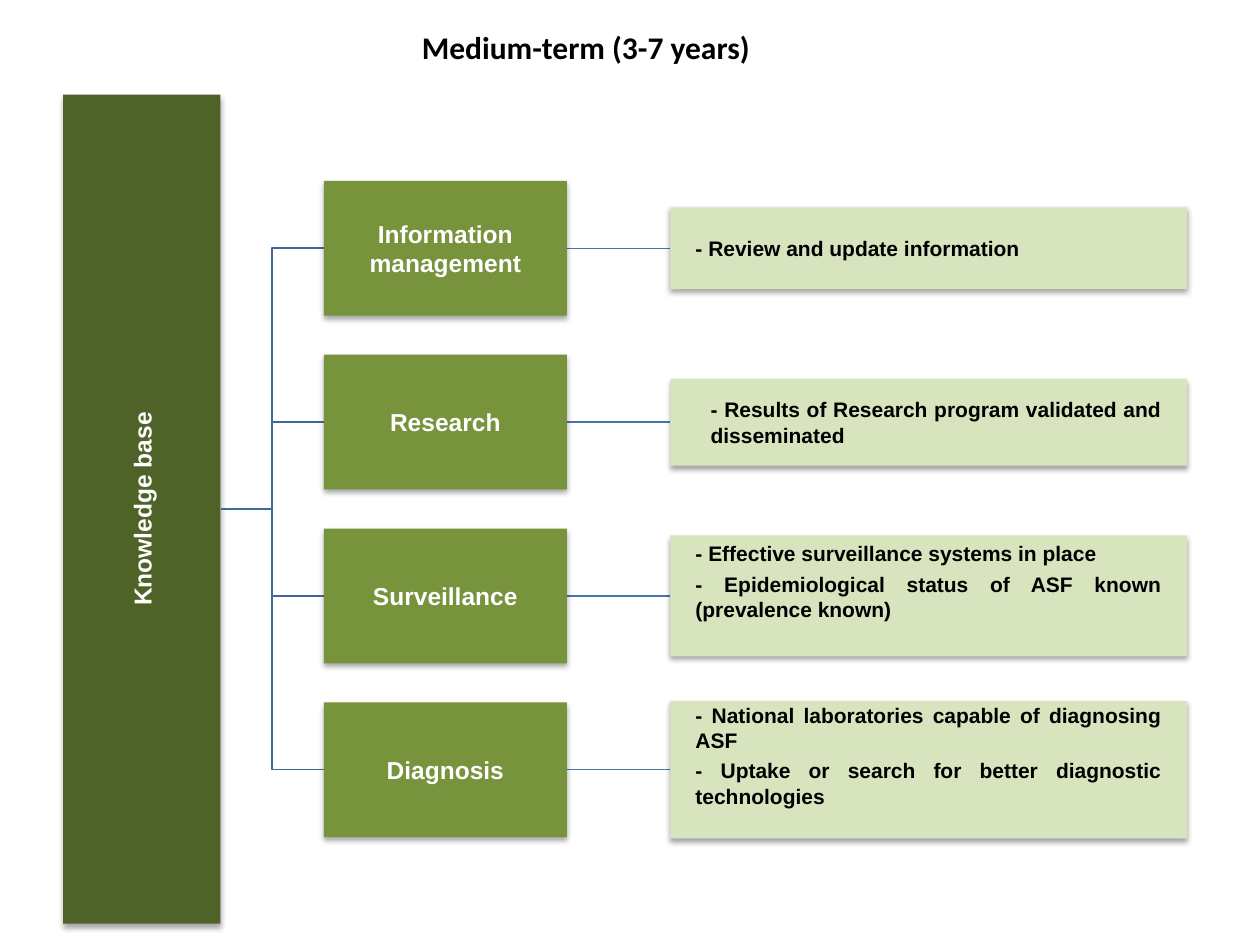
from lxml import etree
from pptx import Presentation
from pptx.dml.color import RGBColor
from pptx.enum import shapes, text
from pptx.oxml.ns import qn
from pptx.util import Inches, Pt

TITLE = "Medium-term (3-7 years)"
ROOT = "Knowledge base"
# Topic, note height, note left indent, space kept free below the note, note lines
TOPICS = [
    ("Information management", 0.65, 0, 0.01, ["- Review and update information"]),
    ("Research", 0.69, 0.12, 0.01,
     ["- Results of Research program validated and disseminated"]),
    ("Surveillance", 0.96, 0, 0.24,
     ["- Effective surveillance systems in place",
      "- Epidemiological status of ASF known (prevalence known)"]),
    ("Diagnosis", 1.09, 0, 0.24,
     ["- National laboratories capable of diagnosing ASF",
      "- Uptake or search for better diagnostic technologies"]),
]

DARK = RGBColor(0x4F, 0x62, 0x28)
GREEN = RGBColor(0x77, 0x93, 0x3C)
PALE = RGBColor(0xD7, 0xE4, 0xBD)
WHITE = RGBColor(0xFF, 0xFF, 0xFF)
BLACK = RGBColor(0, 0, 0)
BRANCH = RGBColor(0x3F, 0x67, 0x97)
LINK = RGBColor(0x48, 0x75, 0xAC)

# Columns (left, width) and rows, in inches
ROOT_X, ROOT_W, ROOT_H = 0.5, 1.25, 6.58
TOPIC_X, TOPIC_W, TOPIC_H = 2.57, 1.93, 1.07
NOTE_X, NOTE_W = 5.32, 4.1
FIRST_Y, PITCH = 1.97, 1.38
MID_Y = FIRST_Y + PITCH * (len(TOPICS) - 1) / 2

prs = Presentation()
prs.slide_width, prs.slide_height = Inches(10), Inches(7.5)
s = prs.slides.add_slide(prs.slide_layouts[6])


def add_shadow(sp):
    sp.shadow.inherit = False
    effects = sp._element.spPr.find(qn("a:effectLst"))
    shadow = etree.SubElement(effects, qn("a:outerShdw"), blurRad=str(Pt(3.1)),
                              dist=str(Pt(1.8)), dir="5400000", rotWithShape="0")
    color = etree.SubElement(shadow, qn("a:srgbClr"), val="000000")
    etree.SubElement(color, qn("a:alpha"), val="35000")


def add_box(cx, cy, w, h, fill, lines, size, color, align,
            side=0.01, bottom=0.01, indent=0):
    sp = s.shapes.add_shape(shapes.MSO_SHAPE.RECTANGLE, Inches(cx - w / 2),
                            Inches(cy - h / 2), Inches(w), Inches(h))
    sp.fill.solid()
    sp.fill.fore_color.rgb = fill
    sp.line.fill.background()
    add_shadow(sp)
    tf = sp.text_frame
    tf.word_wrap = True
    tf.vertical_anchor = text.MSO_ANCHOR.MIDDLE
    tf.margin_left = tf.margin_right = Inches(side)
    tf.margin_top, tf.margin_bottom = Inches(0.01), Inches(bottom)
    tf.text = "\n".join(lines)
    for p in tf.paragraphs:
        p.alignment = align
        p.space_after = Pt(3)
        p.font.name, p.font.size, p.font.bold = "Arial", Pt(size), True
        p.font.color.rgb = color
        if indent:
            p._p.get_or_add_pPr().set("marL", str(Inches(indent)))
    return sp


def add_line(kind, x1, y1, x2, y2, color):
    line = s.shapes.add_connector(kind, Inches(x1), Inches(y1), Inches(x2), Inches(y2))
    line.line.color.rgb = color
    line.line.width = Pt(0.75)
    etree.SubElement(line._element.spPr, qn("a:effectLst"))


# Root bar, turned to read upwards
bar = add_box(ROOT_X + ROOT_W / 2, MID_Y, ROOT_H, ROOT_W, DARK, [ROOT], 14, WHITE,
              text.PP_ALIGN.CENTER)
bar.rotation = 270

# Topics with their branches and notes
for i, (topic, note_h, indent, bottom, lines) in enumerate(TOPICS):
    y = FIRST_Y + i * PITCH
    add_line(shapes.MSO_CONNECTOR.ELBOW, ROOT_X + ROOT_W, MID_Y, TOPIC_X, y, BRANCH)
    add_line(shapes.MSO_CONNECTOR.STRAIGHT, TOPIC_X + TOPIC_W, y, NOTE_X, y, LINK)
    add_box(TOPIC_X + TOPIC_W / 2, y, TOPIC_W, TOPIC_H, GREEN, [topic], 14, WHITE,
            text.PP_ALIGN.CENTER)
    add_box(NOTE_X + NOTE_W / 2, y, NOTE_W, note_h, PALE, lines, 12, BLACK,
            text.PP_ALIGN.JUSTIFY, 0.2, bottom, indent)

# Title
title = s.shapes.add_textbox(Inches(3.25), Inches(0.17), Inches(2.83), Inches(0.4))
tf = title.text_frame
tf.word_wrap = False
tf.auto_size = text.MSO_AUTO_SIZE.SHAPE_TO_FIT_TEXT
p = tf.paragraphs[0]
p.text = TITLE
p.font.name, p.font.size, p.font.bold = "Calibri", Pt(18), True
p.font.color.rgb = BLACK

prs.save("out.pptx")
